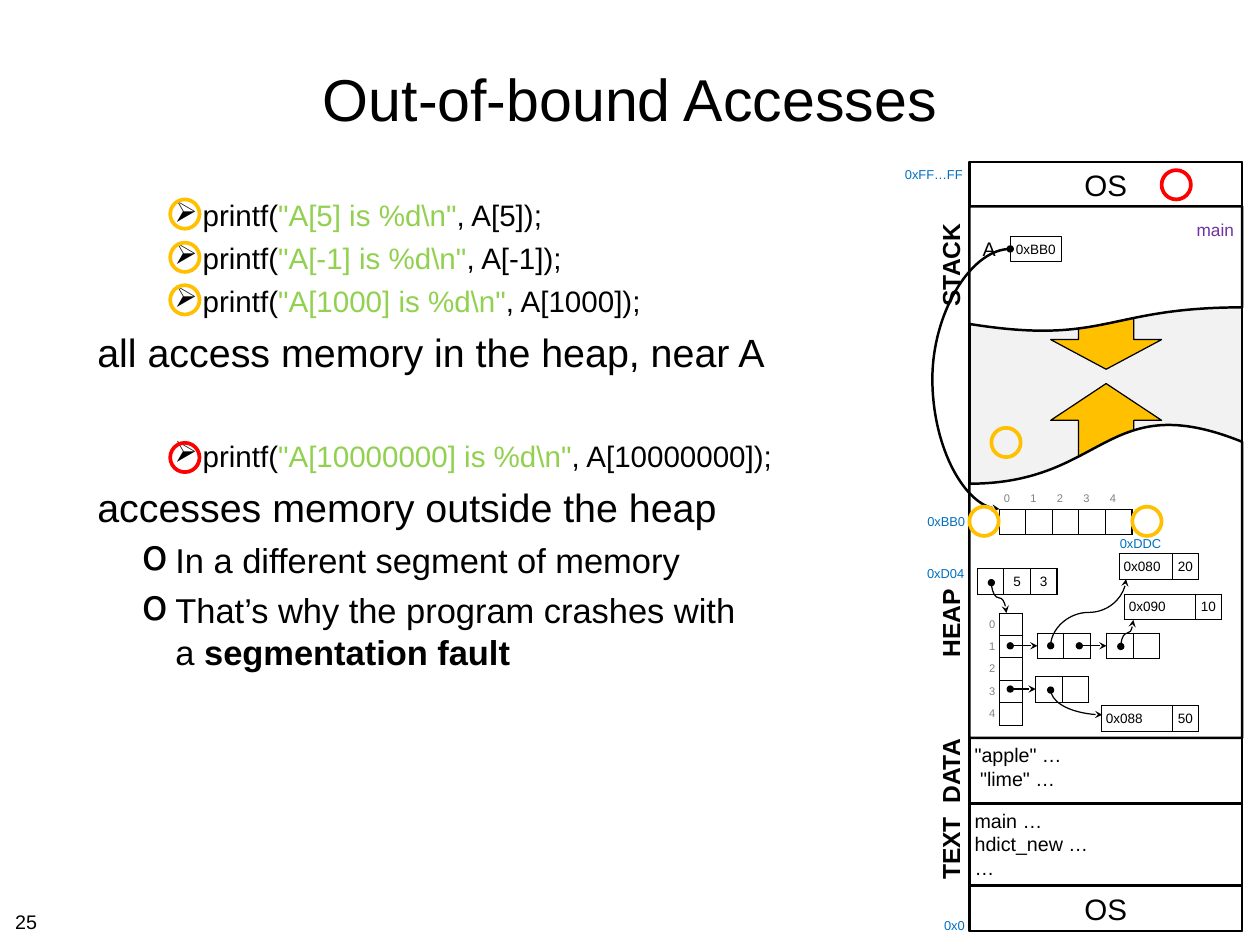
from dataclasses import dataclass
from math import cos, radians, sin

from lxml import etree
from pptx import Presentation
from pptx import util as u
from pptx.dml.color import RGBColor
from pptx.enum import shapes, text
from pptx.oxml.ns import qn

Cm, Pt = u.Cm, u.Pt
KIND, LINK = shapes.MSO_SHAPE, shapes.MSO_CONNECTOR
ALIGN, ANCHOR = text.PP_ALIGN, text.MSO_ANCHOR


@dataclass
class Theme:
    font: str = "Arial"
    ink: str = "000000"
    paper: str = "FFFFFF"
    free: str = "F2F2F2"
    gold: str = "FFC000"
    red: str = "FF0000"
    green: str = "92D050"
    blue: str = "0070C0"
    violet: str = "7030A0"
    grey: str = "808080"
    title: float = 48
    body: float = 32
    sub: float = 28
    code: float = 24
    seg: float = 20
    small: float = 16
    frame: float = 14
    cell: float = 11
    addr: float = 10.5
    index: float = 9


def add(node, tag, **attrs):
    return etree.SubElement(node, qn(tag), **attrs)


class Board:
    def __init__(self, slide, look):
        self.slide, self.look, self.items = slide, look, slide.shapes

    def put_text(self, para, words, size=16, ink=None, align=ALIGN.LEFT, gap=0,
                 indent=None, bullet=None, scale=100):
        """Fill a paragraph; words is a string or a list of (string, colour, bold)."""
        para.alignment, para.space_before = align, Pt(gap)
        runs = [(words, None, False)] if isinstance(words, str) else words
        for part, tint, bold in runs:
            for i, bit in enumerate(part.split("\n")):
                if i:
                    para.add_line_break()
                run = para.add_run()
                run.text = bit
                font = run.font
                font.name, font.size, font.bold = self.look.font, Pt(size), bold
                font.color.rgb = RGBColor.from_string(tint or ink or self.look.ink)
        props = para._p.get_or_add_pPr()
        if indent:
            props.set("marL", str(Cm(indent[0])))
            props.set("indent", str(Cm(indent[1])))
        if bullet:
            add(add(props, "a:buClr"), "a:srgbClr", val=self.look.ink)
            add(props, "a:buSzPct", val=str(scale * 1000))
            add(props, "a:buChar", char=bullet)

    def fill_text(self, frame, lines, wrap=False, anchor=ANCHOR.MIDDLE, **form):
        frame.word_wrap, frame.vertical_anchor = wrap, anchor
        frame.margin_left = frame.margin_right = Cm(0.15)
        frame.margin_top = frame.margin_bottom = Cm(0.15)
        for i, line in enumerate(lines):
            para = frame.add_paragraph() if i else frame.paragraphs[0]
            self.put_text(para, line, **form)

    def label(self, x, y, w, h, words, turn=0, align=ALIGN.CENTER, **form):
        box = self.items.add_textbox(Cm(x), Cm(y), Cm(w), Cm(h))
        box.rotation = turn
        self.fill_text(box.text_frame, [words], align=align, **form)

    def shape(self, kind, x, y, w, h, fill=None, line=None, width=1, turn=0,
              lines=(), **form):
        item = self.items.add_shape(kind, Cm(x), Cm(y), Cm(w), Cm(h))
        item.shadow.inherit = False
        item.rotation = turn
        if fill:
            item.fill.solid()
            item.fill.fore_color.rgb = RGBColor.from_string(fill)
        else:
            item.fill.background()
        item.line.color.rgb = RGBColor.from_string(line or self.look.ink)
        item.line.width = Pt(width)
        if lines:
            self.fill_text(item.text_frame, lines, **form)

    def ring(self, x, y, line):
        self.shape(KIND.OVAL, x, y, 0.84, 0.84, line=line, width=3)

    def arrow(self, start, end, turn=None, preset=None, bend=0.5, width=1):
        """Draw a pointer; turn is the rotation of a curved one, in degrees."""
        mid = [(a + b) / 2 for a, b in zip(start, end)]
        dx, dy = start[0] - mid[0], start[1] - mid[1]
        c, s = cos(radians(turn or 0)), sin(radians(turn or 0))
        px, py = dx * c + dy * s, dy * c - dx * s
        kind = LINK.STRAIGHT if turn is None else LINK.CURVE
        link = self.items.add_connector(kind, Cm(mid[0] + px), Cm(mid[1] + py),
                                        Cm(mid[0] - px), Cm(mid[1] - py))
        link.line.color.rgb = RGBColor.from_string(self.look.ink)
        link.line.width = Pt(width)
        props = link._element.spPr
        if turn:
            props.find(qn("a:xfrm")).set("rot", str(turn * 60000))
            geom = props.find(qn("a:prstGeom"))
            if preset:
                geom.set("prst", preset)
            else:
                adj = geom.find(qn("a:avLst"))
                add(adj, "a:gd", name="adj1", fmla=f"val {round(bend * 100000)}")
        line = props.find(qn("a:ln"))
        add(line, "a:headEnd", type="oval")
        add(line, "a:tailEnd", type="stealth")
        add(props, "a:effectLst")

    def grid(self, x, y, cols, rows, words=None, side=None, size=11, ink=None,
             align=ALIGN.CENTER):
        """Draw cells; with side set, cells with words keep only that border."""
        table = self.items.add_table(len(rows), len(cols), Cm(x), Cm(y),
                                     Cm(sum(cols)), Cm(sum(rows))).table
        table.first_row = table.horz_banding = False
        for col, w in zip(table.columns, cols):
            col.width = Cm(w)
        for row, h in zip(table.rows, rows):
            row.height = Cm(h)
        for i, cell in enumerate(table.iter_cells()):
            word = words[i] if words else ""
            cell.margin_left = cell.margin_right = Cm(0.13)
            cell.margin_top = cell.margin_bottom = Cm(0.13)
            cell.vertical_anchor = ANCHOR.MIDDLE
            para = cell.text_frame.paragraphs[0]
            if word:
                left = len(word) > 2
                self.put_text(para, word, size, ink, ALIGN.LEFT if left else align)
            add(para._p, "a:endParaRPr", sz=str(size * 100))
            props = cell._tc.get_or_add_tcPr()
            for edge in "LRTB":
                line = add(props, "a:ln" + edge, w=str(Pt(1)))
                if side and word and edge != side:
                    add(line, "a:noFill")
                else:
                    add(add(line, "a:solidFill"), "a:srgbClr", val=self.look.ink)
            cell.fill.background()


def draw_code(board, look):
    board.label(2.64, 0.71, 30.84, 4.17, "Out-of-bound Accesses", size=look.title)
    box = board.items.add_textbox(Cm(2.64), Cm(5.51), Cm(30.84), Cm(19.15))
    frame = box.text_frame
    board.fill_text(frame, [], wrap=True, anchor=ANCHOR.TOP)
    code = dict(size=look.code, indent=(3.02, -0.81), bullet="➢")
    plain = dict(size=look.body, gap=8, indent=(1.27, -1.27))
    sub = dict(size=look.sub, gap=7, indent=(2.24, -0.97), bullet="o", scale=125)

    def call(n):
        return [("printf(", None, False), (rf'"A[{n}] is %d\n"', look.green, False),
                (f", A[{n}]);", None, False)]

    fault = [("That’s why the program crashes with\na ", None, False),
             ("segmentation fault", None, True)]
    lines = [(call(n), dict(code, gap=6)) for n in (5, -1, 1000)]
    lines += [("all access memory in the heap, near A", plain),
              (call(10000000), dict(code, gap=51)),
              ("accesses memory outside the heap", plain),
              ("In a different segment of memory", sub), (fault, sub)]
    for i, (words, form) in enumerate(lines):
        para = frame.add_paragraph() if i else frame.paragraphs[0]
        board.put_text(para, words, **form)
    board.label(0.28, 25.98, 0.94, 0.89, "25", size=look.small)


def draw_memory(board, look):
    x, w = 27.79, 7.82
    board.shape(KIND.RECTANGLE, x, 4.65, w, 22.05, look.free, width=2)
    board.shape(KIND.DOWN_ARROW, 30.12, 8.89, 3.18, 1.7, look.gold)
    board.shape(KIND.UP_ARROW, 30.12, 11, 3.18, 2.11, look.gold)
    for y, h in (4.65, 1.27), (25.4, 1.3):
        board.shape(KIND.RECTANGLE, x, y, w, h, look.paper, width=2, lines=["OS"],
                    size=look.code, align=ALIGN.CENTER)
    for y, h, lines in ((23.04, 2.36, ["main …", "hdict_new …", "…"]),
                        (21.16, 1.88, ['"apple" …', ' "lime" …'])):
        board.shape(KIND.RECTANGLE, x, y, w, h, look.paper, width=2, lines=lines,
                    size=look.small, wrap=True, anchor=ANCHOR.TOP)
    for y, h, turn in (5.92, 3.61, 0), (12.07, 9.09, 180):
        board.shape(KIND.FLOWCHART_DOCUMENT, x, y, w, h, look.paper, width=2, turn=turn)
    for y, name in (7.6, "STACK"), (17.88, "HEAP"), (24.33, "TEXT"), (22.12, "DATA"):
        board.label(25.74, y - 0.56, 3, 1.12, [(name, None, True)], turn=270,
                    size=look.seg)
    for left, y, wide, name in ((26.31, 16.08, 1.6, "0xD04"), (31.83, 15.24, 1.73, "0xDDC"),
                                (26.8, 26.19, 1.12, "0x0"), (25.68, 4.65, 2.18, "0xFF…FF"),
                                (26.31, 14.6, 1.63, "0xBB0")):
        board.label(left, y, wide, 0.71, name, size=look.addr, ink=look.blue)
    board.label(34.04, 6.15, 1.6, 0.86, "main", size=look.frame, ink=look.violet)
    board.label(28.02, 6.65, 0.66, 0.97, "A", size=look.small)
    board.shape(KIND.RECTANGLE, 28.96, 6.78, 1.47, 0.71, lines=["0xBB0"],
                size=look.cell, align=ALIGN.CENTER)


def draw_heap(board, look):
    cell, high, low = 0.76, 0.71, 0.64
    note = dict(size=look.index, ink=look.grey)
    board.grid(28.02, 17.58, [low] * 2, [low] * 5, [t for n in "01234" for t in (n, "")],
               side="R", align=ALIGN.RIGHT, **note)
    board.grid(28.65, 13.97, [cell] * 5, [low, high], list("01234") + [""] * 5,
               side="B", align=ALIGN.LEFT, **note)
    board.grid(28.02, 16.31, [cell] * 3, [high], ["", "5", "3"])
    for x, y in (29.74, 18.16), (29.69, 19.41), (31.72, 18.16):
        board.grid(x, y, [cell] * 2, [high])
    for x, y, w, key, count in ((32.08, 15.88, 1.52, "0x080", "20"),
                                (32.23, 17.04, 2.03, "0x090", "10"),
                                (31.57, 20.24, 2.03, "0x088", "50")):
        board.grid(x, y, [w, cell], [high], [key, count])
    for x, y, end in (28.96, 18.52, 29.74), (28.96, 19.76, 29.69), (30.94, 18.52, 31.72):
        board.arrow((x, y), (end, y))
    board.arrow((30.12, 18.52), (32.28, 16.61), 90)
    board.arrow((30.12, 19.79), (31.6, 20.5), 270, preset="curvedConnector2")
    board.arrow((32.13, 18.54), (32.49, 17.78), 90)
    board.arrow((28.42, 16.71), (28.85, 17.58), 270)
    board.arrow((28.96, 7.14), (28.65, 14.6), 180, bend=7.2, width=2)


def main():
    deck = Presentation()
    deck.slide_width, deck.slide_height = Cm(36.12), Cm(27.1)
    look = Theme()
    board = Board(deck.slides.add_slide(deck.slide_layouts[6]), look)
    draw_code(board, look)
    draw_memory(board, look)
    draw_heap(board, look)
    for x, y in ((32.46, 14.53), (27.79, 14.53), (28.42, 12.27),
                 (4.88, 5.72), (4.88, 6.96), (4.88, 8.18)):
        board.ring(x, y, look.gold)
    for x, y in (4.88, 12.7), (33.3, 4.88):
        board.ring(x, y, look.red)
    deck.save("out.pptx")


if __name__ == "__main__":
    main()
